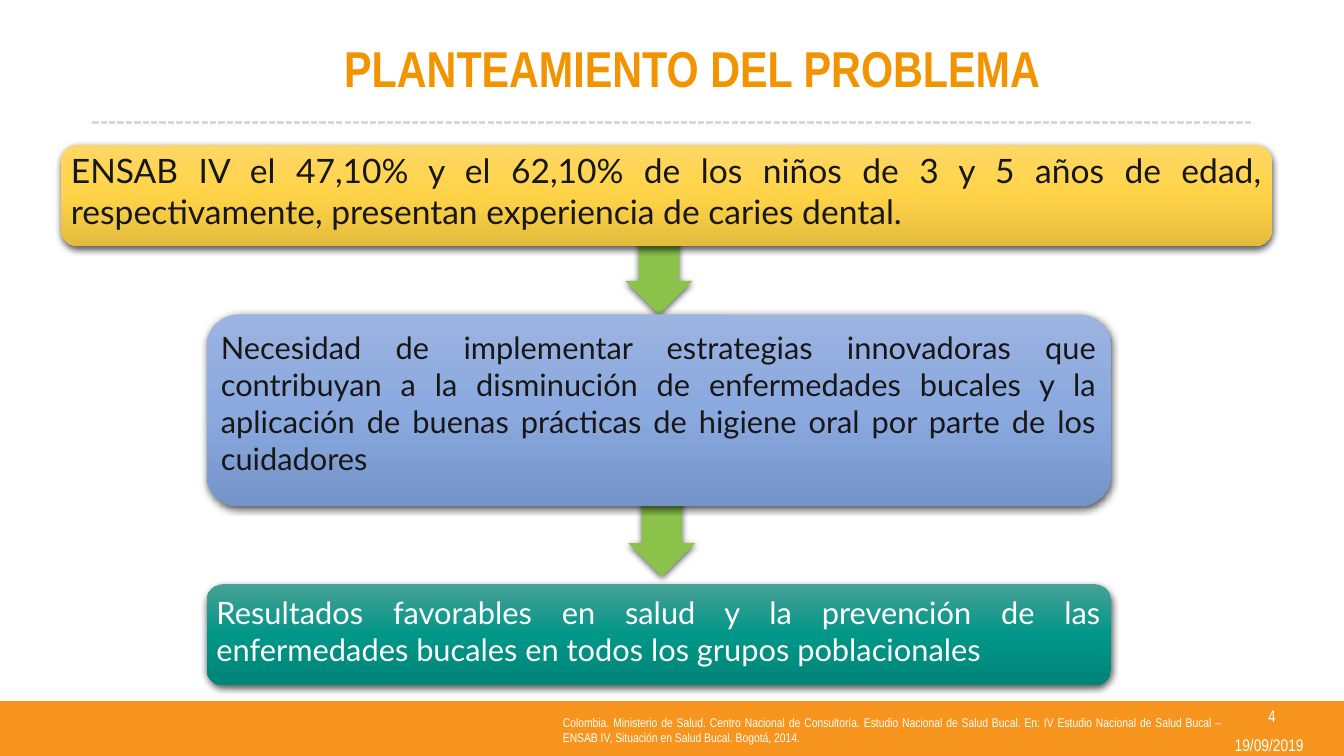
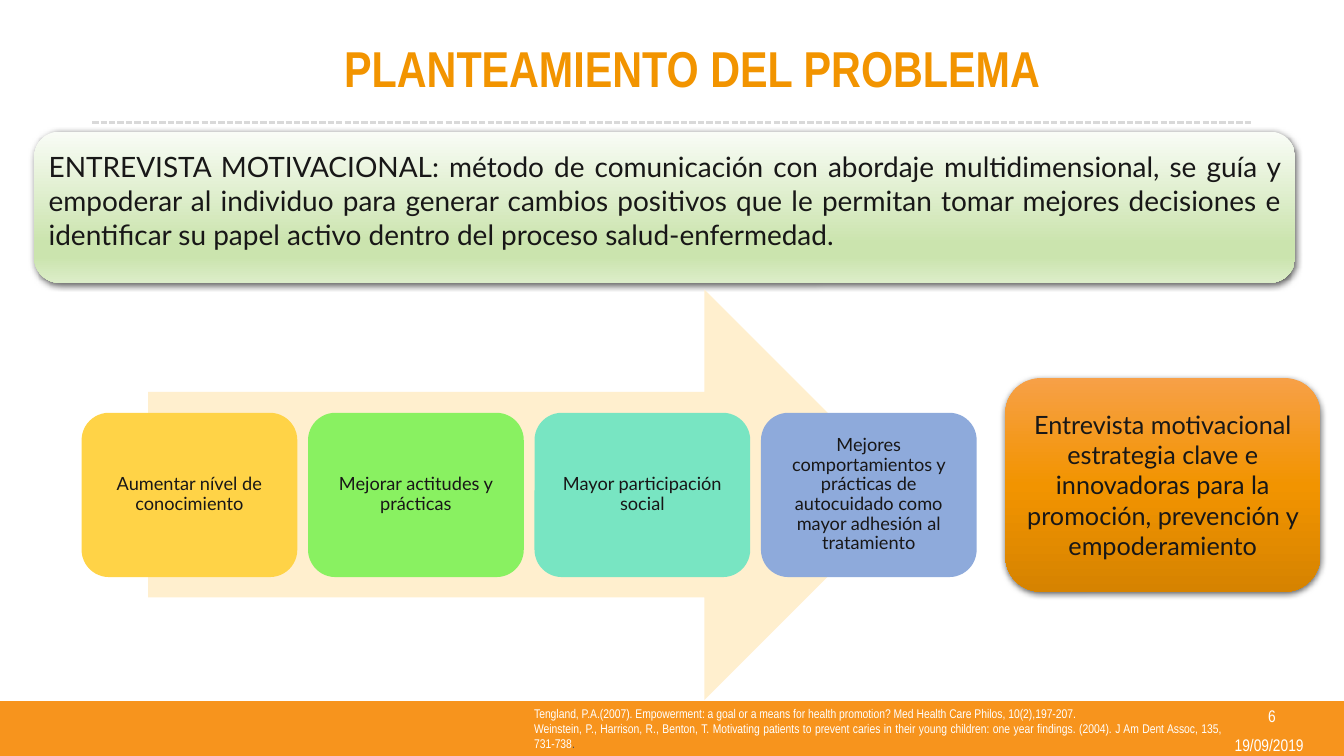
from lxml import etree
from pptx import Presentation
from pptx.dml.color import RGBColor
from pptx.enum.dml import MSO_LINE
from pptx.enum.shapes import MSO_CONNECTOR, MSO_SHAPE
from pptx.enum.text import MSO_ANCHOR, MSO_AUTO_SIZE, PP_ALIGN
from pptx.oxml.ns import qn
from pptx.util import Inches, Pt

RECT, ROUND = MSO_SHAPE.RECTANGLE, MSO_SHAPE.ROUNDED_RECTANGLE
LEFT, RIGHT = MSO_SHAPE.LEFT_ARROW, MSO_SHAPE.RIGHT_ARROW
TOP, MID = MSO_ANCHOR.TOP, MSO_ANCHOR.MIDDLE
JUST, CENTER = PP_ALIGN.JUSTIFY, PP_ALIGN.CENTER
DASH, LINE = MSO_LINE.SQUARE_DOT, MSO_CONNECTOR.STRAIGHT
FIXED = MSO_AUTO_SIZE.NONE

WIDE, HIGH = Inches(26.67), Inches(15)
HEAD, BODY = "Arial Narrow", "Lato"
HUES = {
    "band": "F7941D", "title": "F29400", "rule": "D9D9D9", "ink": "181717",
    "white": "FFFFFF", "gray": "4D4D4F", "shade": "000000", "lime": "8BC34A",
    "cream": "FFEFCE", "gold": "FFD347", "green": "89F161", "mint": "78E5C2",
    "blue": "8EAADB",
}
FADES = {
    "gold": [(0, "FFD764"), (50, "FFD347"), (100, "E4BC3D")],
    "blue": [(0, "9CB4E0"), (50, "8AA9DF"), (100, "7594CA")],
    "teal": [(0, "47A195"), (50, "009688"), (100, "008578")],
    "pale": [(0, "F9FCF6"), (74, "CBE4AE"), (83, "CBE4AE"), (100, "DCEDC9")],
    "amber": [(0, "F7A047"), (50, "F29400"), (100, "D68300")],
}


class Deck:
    """Hold the shared style and draw on the current slide in percent shares."""

    def __init__(self):
        self.prs = Presentation()
        self.prs.slide_width, self.prs.slide_height = WIDE, HIGH
        self.slide = None

    def area(self, left, top, width, height):
        """Turn percent shares into slide lengths."""
        return (int(WIDE * left / 100), int(HIGH * top / 100),
                int(WIDE * width / 100), int(HIGH * height / 100))

    def page(self, title, number, date, cites, spot):
        """Start a slide with its title, rule and footer."""
        self.slide = self.prs.slides.add_slide(self.prs.slide_layouts[5])
        head = self.slide.shapes.title
        head.left, head.top, head.width, head.height = self.area(8.4, 1.73, 86.24, 14.33)
        self.words(head, [[(title, "title")]], 72, HEAD, bold=True)
        self.shape(RECT, (0, 92.73, 100, 7.27), "band")
        self.rule(6.86, 93.1, 16.2)
        self.label((89.16, 96.94, 10.54, 3.06), [[(date, "white")]], 24)
        self.label(spot, cites, 18, JUST)
        self.label((93.89, 92.73, 1.5, 4), [[(number, "white")]], 24, wrap=False)

    def words(self, shape, paras, size, face, align=CENTER, anchor=MID,
              pad=(0.37, 0.67), bold=False, wrap=True, space=1.0):
        """Fill a shape with paragraphs made of (text, hue) runs."""
        frame = shape.text_frame
        frame.auto_size, frame.word_wrap, frame.vertical_anchor = FIXED, wrap, anchor
        frame.margin_left = frame.margin_right = int(WIDE * pad[0] / 100)
        frame.margin_top = frame.margin_bottom = int(HIGH * pad[1] / 100)
        for i, runs in enumerate(paras):
            para = frame.add_paragraph() if i else frame.paragraphs[0]
            para.alignment, para.line_spacing = align, space
            for text, hue in runs:
                run = para.add_run()
                run.text = text
                run.font.name, run.font.size, run.font.bold = face, Pt(size), bold
                run.font.color.rgb = RGBColor.from_string(HUES[hue])

    def label(self, spot, paras, size, align=CENTER, wrap=True):
        """Add a footer text box."""
        box = self.slide.shapes.add_textbox(*self.area(*spot))
        self.words(box, paras, size, HEAD, align, wrap=wrap)

    def rule(self, start, end, top):
        """Add the dashed line under the title."""
        x, y, width, _ = self.area(start, top, end - start, 0)
        line = self.slide.shapes.add_connector(LINE, x, y, x + width, y)
        line.line.color.rgb = RGBColor.from_string(HUES["rule"])
        line.line.width, line.line.dash_style = Pt(3), DASH
        etree.SubElement(line._element.spPr, qn("a:effectLst"))

    def shape(self, kind, spot, hue):
        """Add a flat preset shape without outline."""
        item = self.slide.shapes.add_shape(kind, *self.area(*spot))
        item.shadow.inherit = False
        item.line.fill.background()
        item.fill.solid()
        item.fill.fore_color.rgb = RGBColor.from_string(HUES[hue])
        return item

    def shade(self, item):
        """Give a shape a soft shadow below it."""
        effects = item._element.spPr.find(qn("a:effectLst"))
        outer = etree.SubElement(effects, qn("a:outerShdw"), blurRad=str(Pt(10)),
                                 dist=str(Pt(3)), dir="5400000", rotWithShape="0")
        tint = etree.SubElement(outer, qn("a:srgbClr"), val=HUES["shade"])
        etree.SubElement(tint, qn("a:alpha"), val="63000")

    def fade(self, item, name):
        """Fill a shape with a named vertical gradient."""
        item.fill.gradient()
        item.fill.gradient_angle = 270
        stops = item._element.spPr.find(".//" + qn("a:gsLst"))
        for old in list(stops):
            stops.remove(old)
        for share, hue in FADES[name]:
            stop = etree.SubElement(stops, qn("a:gs"), pos=str(share * 1000))
            etree.SubElement(stop, qn("a:srgbClr"), val=hue)

    def card(self, spot, name, text, size, hue="ink", **style):
        """Add a rounded gradient card with text."""
        item = self.shape(ROUND, spot, "white")
        self.fade(item, name)
        self.shade(item)
        self.words(item, [[(text, hue)]], size, BODY, **style)

    def step(self, spot, hue, text):
        """Add a flat rounded step with text."""
        item = self.shape(ROUND, spot, hue)
        self.words(item, [[(text, "ink")]], 26, BODY, pad=(0.41, 0.73), space=0.9)

    def drop(self, left, top):
        """Add a downward arrow between two cards."""
        item = self.shape(LEFT, (left, top, 11.21, 8.87), "lime")
        item.rotation = 270
        item.adjustments[0], item.adjustments[1] = 0.6, 0.5
        self.shade(item)


def main():
    """Build both slides and save them."""
    deck = Deck()
    title, date = "PLANTEAMIENTO DEL PROBLEMA", "19/09/2019"
    block = {"align": JUST, "anchor": TOP}

    deck.page(title, "4", date, [[(
        "Colombia. Ministerio de Salud. Centro Nacional de Consultoría. Estudio Nacional "
        "de Salud Bucal. En: IV Estudio Nacional de Salud Bucal – ENSAB IV, Situación en "
        "Salud Bucal. Bogotá, 2014.", "white")]], (41.51, 93.87, 49.79, 5.4))
    deck.drop(43.42, 27.2)
    deck.card((4.54, 19.13, 90.1, 13.4), "gold",
              "ENSAB IV el 47,10% y el 62,10% de los niños de 3 y 5 años de edad, "
              "respectivamente, presentan experiencia de caries dental.",
              48, pad=(0.37, 0.07), **block)
    deck.drop(43.64, 61.87)
    deck.card((15.37, 41.6, 67.3, 25.33), "blue",
              "Necesidad de implementar estrategias innovadoras que contribuyan a la "
              "disminución de enfermedades bucales y la aplicación de buenas prácticas de "
              "higiene oral por parte de los cuidadores", 44, **block)
    deck.card((15.37, 77.27, 67.3, 13.4), "teal",
              "Resultados favorables en salud y la prevención de las enfermedades bucales "
              "en todos los grupos poblacionales", 44, "white", **block)

    deck.page(title, "6", date, [
        [("Tengland, P.A.(2007). Empowerment: a goal or a means for health promotion? "
          "Med Health Care Philos, 10(2),197-207.", "white")],
        [("Weinstein, P., Harrison, R., Benton, T. Motivating patients to prevent caries "
          "in their young children: one year findings. (2004). J Am Dent Assoc, 135, "
          "731-738", "white"), (".", "gray")],
    ], (39.37, 92.67, 51.97, 7.33))
    deck.card((2.55, 17.4, 93.81, 20), "pale",
              "ENTREVISTA MOTIVACIONAL: método de comunicación con abordaje "
              "multidimensional, se guía y empoderar al individuo para generar cambios "
              "positivos que le permitan tomar mejores decisiones e identificar su papel "
              "activo dentro del proceso salud-enfermedad.",
              40, pad=(0.52, 1.47), **block)
    deck.shape(RIGHT, (11.02, 38.27, 56.66, 54.33), "cream")
    steps = [
        ("gold", "Aumentar nível de conocimiento"),
        ("green", "Mejorar actitudes y prácticas"),
        ("mint", "Mayor participación social"),
        ("blue", "Mejores comportamientos y prácticas de autocuidado como mayor "
                 "adhesión al tratamiento"),
    ]
    for i, (hue, text) in enumerate(steps):
        deck.step((6.07 + i * 16.85, 54.6, 16.05, 21.73), hue, text)
    deck.card((74.8, 50, 23.43, 28.27), "amber",
              "Entrevista motivacional estrategia clave e innovadoras para la promoción, "
              "prevención y empoderamiento", 36)
    deck.prs.save("out.pptx")


if __name__ == "__main__":
    main()
